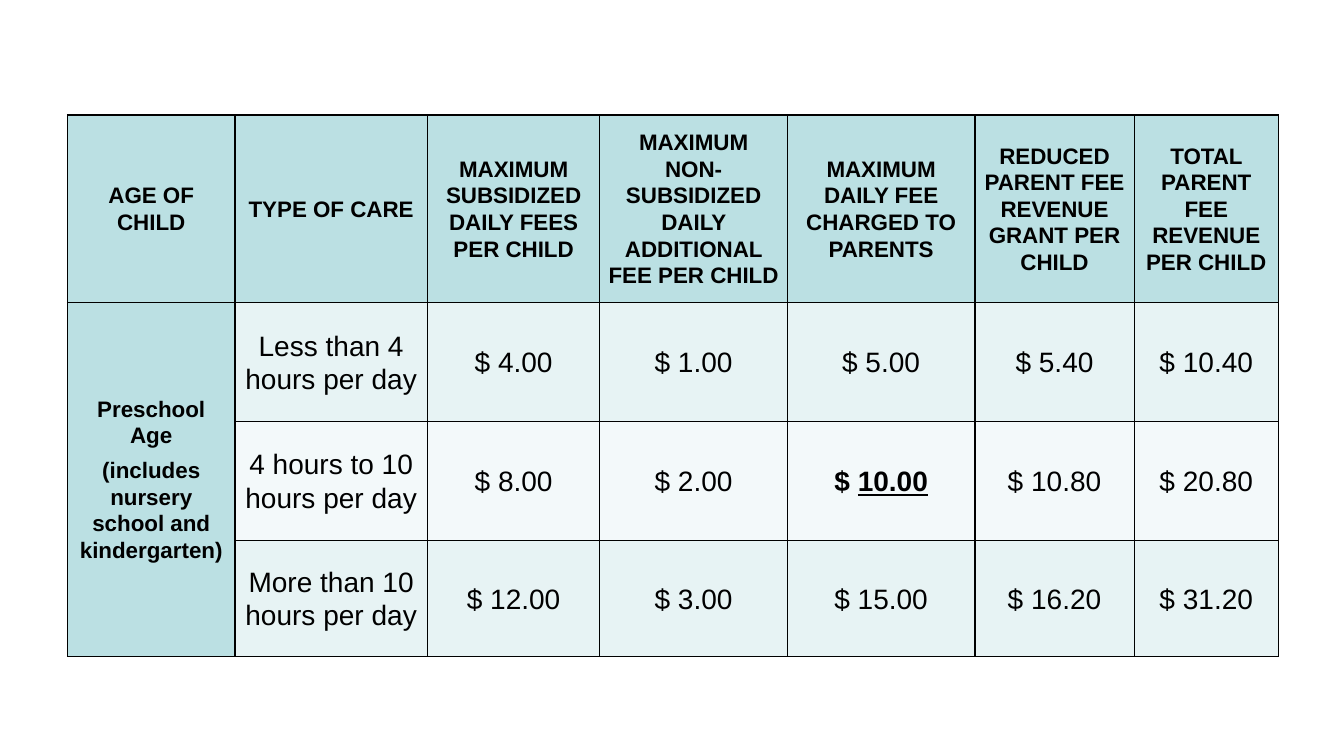
from dataclasses import dataclass

import pptx
import pptx.dml.color
import pptx.enum.text
import pptx.oxml
import pptx.oxml.ns
import pptx.table
import pptx.util

EMU_PER_PX = 9144
BLACK = "000000"
HEADING_FILL = "BBE0E3"
BAND_FILLS = ("E7F3F4", "F3F9FA")
BORDER_SIDES = ("lnL", "lnR", "lnT", "lnB")

COLUMN_WIDTHS = (166, 191, 171, 186, 186, 158, 143)
ROW_HEIGHTS = (186, 118, 118, 115)
HEADINGS = (
    "AGE OF CHILD",
    "TYPE OF CARE",
    "MAXIMUM SUBSIDIZED DAILY FEES PER CHILD",
    "MAXIMUM\vNON-SUBSIDIZED DAILY ADDITIONAL FEE PER CHILD",
    "MAXIMUM DAILY FEE CHARGED TO PARENTS",
    "REDUCED PARENT FEE REVENUE GRANT PER CHILD",
    "TOTAL PARENT FEE REVENUE PER CHILD",
)
AGE_GROUP = ("Preschool", "Age", "(includes nursery school and kindergarten)")
MAXIMUM_FEE_COLUMN = 4


@dataclass(frozen=True)
class CareType:
    label: str
    fees: tuple[str, ...]
    highlighted: bool = False


CARE_TYPES = (
    CareType("Less than 4 hours per day", ("4.00", "1.00", "5.00", "5.40", "10.40")),
    CareType("4 hours to 10 hours per day", ("8.00", "2.00", "10.00", "10.80", "20.80"), True),
    CareType("More than 10 hours per day", ("12.00", "3.00", "15.00", "16.20", "31.20")),
)


@dataclass(frozen=True)
class CellStyle:
    fill: str
    size: int
    bold: bool


HEADING_STYLE = CellStyle(HEADING_FILL, 16, True)


def px(length: int) -> pptx.util.Emu:
    return pptx.util.Emu(length * EMU_PER_PX)


def colour(value: str) -> pptx.dml.color.RGBColor:
    return pptx.dml.color.RGBColor.from_string(value)


def add_borders(cell: pptx.table._Cell) -> None:
    properties = cell._tc.get_or_add_tcPr()
    for side in BORDER_SIDES:
        properties.append(pptx.oxml.parse_xml(
            f'<a:{side} {pptx.oxml.ns.nsdecls("a")} w="{pptx.util.Pt(1)}">'
            f'<a:solidFill><a:srgbClr val="{BLACK}"/></a:solidFill></a:{side}>'
        ))


def format_cell(cell: pptx.table._Cell, style: CellStyle) -> None:
    cell.margin_left = cell.margin_right = px(6)
    cell.margin_top = cell.margin_bottom = 0
    cell.vertical_anchor = pptx.enum.text.MSO_ANCHOR.MIDDLE
    add_borders(cell)
    cell.fill.solid()
    cell.fill.fore_color.rgb = colour(style.fill)
    for para in cell.text_frame.paragraphs:
        para.alignment = pptx.enum.text.PP_ALIGN.CENTER
        para.line_spacing = 1.07
        para.font.name = "Arial"
        para.font.size = pptx.util.Pt(style.size)
        para.font.bold = style.bold
        para.font.color.rgb = colour(BLACK)


def fill_headings(table: pptx.table.Table) -> None:
    for column, heading in enumerate(HEADINGS):
        cell = table.cell(0, column)
        cell.text = heading
        format_cell(cell, HEADING_STYLE)


def fill_age_group(table: pptx.table.Table) -> None:
    age_cell = table.cell(1, 0)
    age_cell.merge(table.cell(len(CARE_TYPES), 0))
    age_cell.text = "\n".join(AGE_GROUP)
    for row in range(1, len(CARE_TYPES) + 1):
        format_cell(table.cell(row, 0), HEADING_STYLE)
    age_cell.text_frame.paragraphs[1].space_after = pptx.util.Pt(6)


def fill_care_type(table: pptx.table.Table, row: int, care: CareType) -> None:
    fill = BAND_FILLS[(row - 1) % len(BAND_FILLS)]
    label_cell = table.cell(row, 1)
    label_cell.text = care.label
    format_cell(label_cell, CellStyle(fill, 20, False))
    for column, fee in enumerate(care.fees, start=2):
        cell = table.cell(row, column)
        emphasised = care.highlighted and column == MAXIMUM_FEE_COLUMN
        para = cell.text_frame.paragraphs[0]
        if emphasised:
            para.add_run().text = "$ "
            amount = para.add_run()
            amount.text = fee
            amount.font.underline = True
        else:
            para.add_run().text = f"$ {fee}"
        format_cell(cell, CellStyle(fill, 20, emphasised))


def main() -> None:
    deck = pptx.Presentation()
    deck.slide_width, deck.slide_height = px(1333), px(750)
    page = deck.slides.add_slide(deck.slide_layouts[6])
    table = page.shapes.add_table(
        len(ROW_HEIGHTS), len(COLUMN_WIDTHS),
        px(67), px(114), px(sum(COLUMN_WIDTHS)), px(sum(ROW_HEIGHTS)),
    ).table
    table.first_row = table.horz_banding = False
    for column, width in zip(table.columns, COLUMN_WIDTHS):
        column.width = px(width)
    for row, height in zip(table.rows, ROW_HEIGHTS):
        row.height = px(height)

    fill_headings(table)
    fill_age_group(table)
    for row_number, care in enumerate(CARE_TYPES, start=1):
        fill_care_type(table, row_number, care)
    deck.save("out.pptx")


if __name__ == "__main__":
    main()
